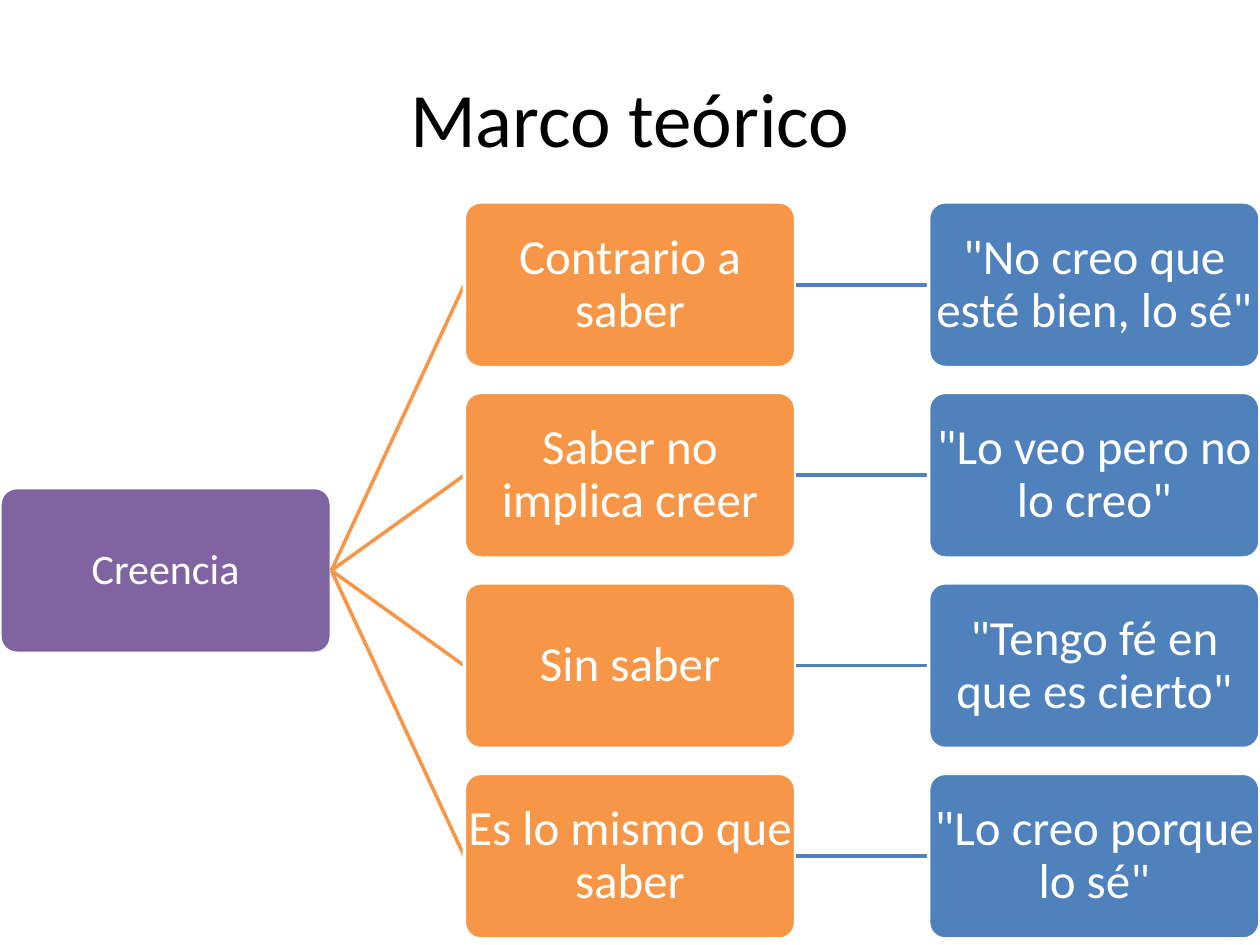
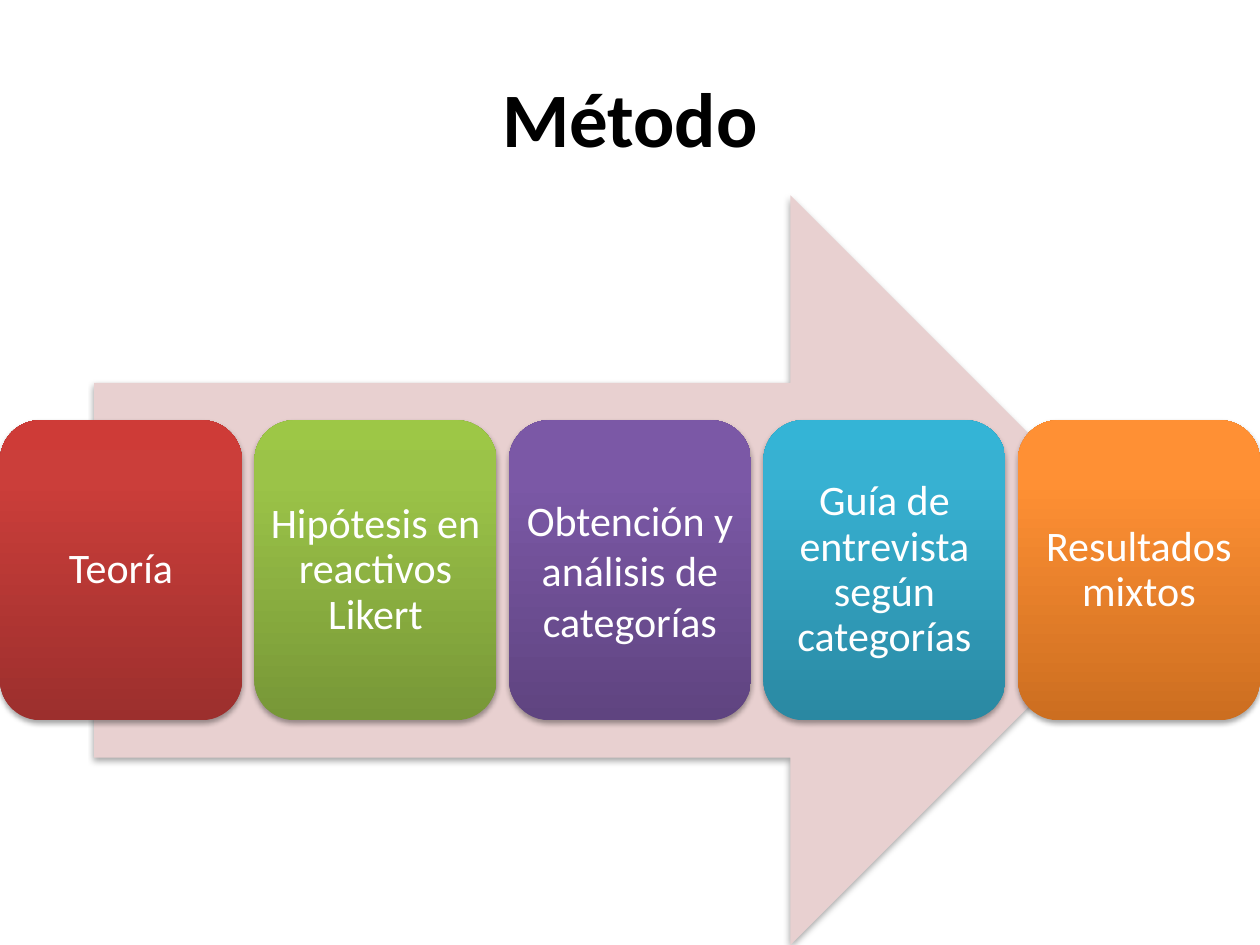
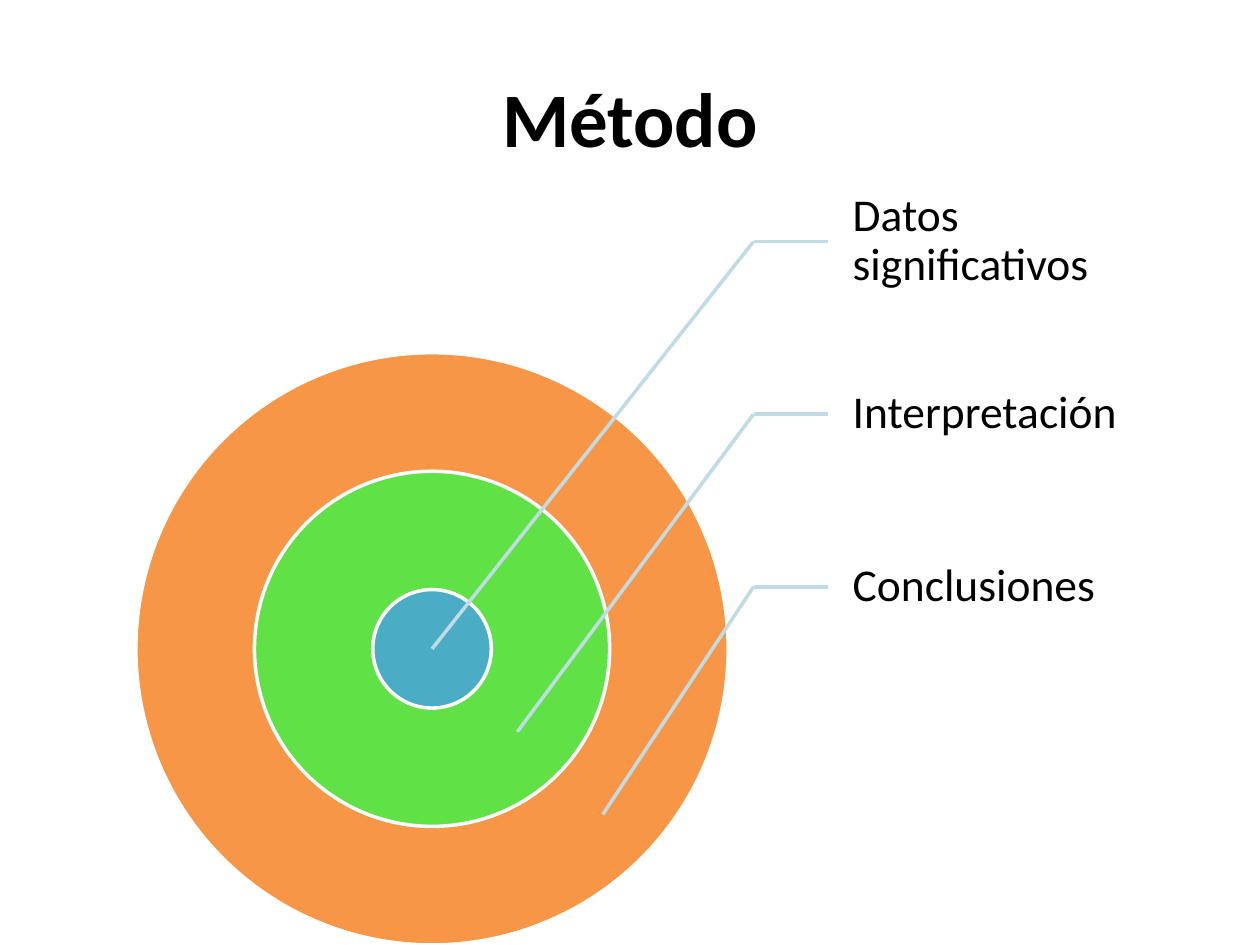
import copy

import lxml.etree
import pptx
import pptx.dml.color
import pptx.enum.shapes
import pptx.enum.text
import pptx.oxml
import pptx.oxml.ns
import pptx.util

Cm, Pt = pptx.util.Cm, pptx.util.Pt
RGB = pptx.dml.color.RGBColor.from_string
SHAPE = pptx.enum.shapes.MSO_SHAPE
ALIGN = pptx.enum.text.PP_ALIGN
qn = pptx.oxml.ns.qn

FONT = "Calibri"
COLORS = {
    "black": "000000", "white": "FFFFFF", "purple": "8064A2", "orange": "F79646",
    "blue": "4F81BD", "pink": "E8D0D0", "green": "60E146", "teal": "4BACC6",
    "pale blue": "C1DBE5",
}
SHADOW = (
    '<a:outerShdw xmlns:a="http://schemas.openxmlformats.org/drawingml/2006/main"'
    ' blurRad="40000" dist="23000" dir="5400000" rotWithShape="0">'
    '<a:srgbClr val="000000"><a:alpha val="35000"/></a:srgbClr></a:outerShdw>'
)


def write(sp, text, size, color="white", align=ALIGN.CENTER, inset=0, spacing=0.9, bold=False):
    tf = sp.text_frame
    tf.text = text
    tf.word_wrap = True
    tf.vertical_anchor = pptx.enum.text.MSO_ANCHOR.MIDDLE
    tf.margin_left = tf.margin_right = Cm(inset)
    tf.margin_top = tf.margin_bottom = Cm(0.1)
    p = tf.paragraphs[0]
    p.alignment = align
    p.line_spacing = spacing
    font = p.runs[0].font
    font.name, font.size, font.bold = FONT, Pt(size), bold
    font.color.rgb = RGB(COLORS[color])


def draw_line(s, x1, y1, x2, y2, color):
    line = s.shapes.add_connector(
        pptx.enum.shapes.MSO_CONNECTOR.STRAIGHT, Cm(x1), Cm(y1), Cm(x2), Cm(y2))
    line.line.color.rgb = RGB(COLORS[color])
    line.line.width = Pt(2)
    lxml.etree.SubElement(line._element.spPr, qn("a:effectLst"))
    return line


prs = pptx.Presentation()
prs.slide_width, prs.slide_height = Cm(25.4), Cm(19.05)

# Slides with their titles
slides = []
for title, bold in [("Marco teórico", False), ("Método", True), ("Método", True)]:
    s = prs.slides.add_slide(prs.slide_layouts[6])
    sp = s.shapes.add_textbox(Cm(1.27), Cm(0.76), Cm(22.86), Cm(3.18))
    write(sp, title, 44, "black", inset=0.25, spacing=1, bold=bold)
    slides.append(s)
theory, process, rings = slides

# Slide 1: tree of beliefs, a root and four branches of two boxes
branches = [
    ("Contrario a saber", '"No creo que esté bien, lo sé"'),
    ("Saber no implica creer", '"Lo veo pero no lo creo"'),
    ("Sin saber", '"Tengo fé en que es cierto"'),
    ("Es lo mismo que saber", '"Lo creo porque lo sé"'),
]
box_w, box_h, col_step, row_step, top = 6.68, 3.34, 9.36, 3.84, 4.07
nodes = [(0, 1.5, "Creencia")]
nodes += [(col, row, text) for row, pair in enumerate(branches)
          for col, text in enumerate(pair, 1)]
root = None
for col, row, text in nodes:
    color = ("purple", "orange", "blue")[col]
    x, y = col * col_step, top + row * row_step
    link = None
    if col:
        parent = root if col == 1 else previous
        link = draw_line(theory, x - col_step + box_w, y + box_h / 2, x, y + box_h / 2, color)
        link.begin_connect(parent, 3)
    sp = theory.shapes.add_shape(SHAPE.ROUNDED_RECTANGLE, Cm(x), Cm(y), Cm(box_w), Cm(box_h))
    sp.adjustments[0] = 0.1
    sp.shadow.inherit = False
    sp.fill.solid()
    sp.fill.fore_color.rgb = RGB(COLORS[color])
    sp.line.color.rgb = RGB(COLORS["white"])
    sp.line.width = Pt(2)
    write(sp, text, 28 if col else 24, inset=-0.04)
    if link:
        link.end_connect(sp, 1)
    root = root or sp
    previous = sp

# Slide 2: arrow behind five steps
arrow = process.shapes.add_shape(SHAPE.RIGHT_ARROW, Cm(1.9), Cm(3.94), Cm(21.59), Cm(15.11))
arrow.fill.solid()
arrow.fill.fore_color.rgb = RGB(COLORS["pink"])
steps = [
    ("Teoría", ("9C2F2D", "CB3E3A", "CE3B37"), 0.9),
    ("Hipótesis en reactivos Likert", ("779737", "9BC348", "9DC746"), 0.9),
    ("Obtención y análisis de categorías", ("5F4480", "7B58A6", "7C57A8"), 1),
    ("Guía de entrevista según categorías", ("2A88A2", "37B1D2", "34B4D6"), 0.9),
    ("Resultados mixtos", ("CC6E20", "FF9034", "FF9136"), 0.9),
]
shaded = [arrow]
for i, (text, shades, spacing) in enumerate(steps):
    sp = process.shapes.add_shape(
        SHAPE.ROUNDED_RECTANGLE, Cm(i * 5.13), Cm(8.47), Cm(4.88), Cm(6.05))
    sp.fill.gradient()
    sp.fill.gradient_angle = 90
    stop_list = sp._element.spPr.find(qn("a:gradFill")).find(qn("a:gsLst"))
    stop_list.append(copy.deepcopy(stop_list[0]))
    for stop, position, shade in zip(sp.fill.gradient_stops, (0, 0.8, 1), shades):
        stop.position = position
        stop.color.rgb = RGB(shade)
    write(sp, text, 24, spacing=spacing)
    shaded.append(sp)
for sp in shaded:
    sp.line.fill.background()
    sp.shadow.inherit = False
    sp._element.spPr.find(qn("a:effectLst")).append(pptx.oxml.parse_xml(SHADOW))

# Slide 3: concentric rings
center_x, center_y = 8.71, 13.08
for diameter, color in [(11.94, "orange"), (7.16, "green"), (2.39, "teal")]:
    sp = rings.shapes.add_shape(
        SHAPE.OVAL, Cm(center_x - diameter / 2), Cm(center_y - diameter / 2),
        Cm(diameter), Cm(diameter))
    sp.shadow.inherit = False
    sp.fill.solid()
    sp.fill.fore_color.rgb = RGB(COLORS[color])
    sp.line.color.rgb = RGB(COLORS["white"])
    sp.line.width = Pt(2)

# Slide 3: labels with bent leader lines
label_x, label_h, elbow_x = 16.69, 3.48, 15.19
for i, text in enumerate(["Datos significativos", "Interpretación", "Conclusiones"]):
    y = 3.13 + i * label_h
    sp = rings.shapes.add_textbox(Cm(label_x), Cm(y), Cm(5.97), Cm(label_h))
    write(sp, text, 26, "black", ALIGN.LEFT, inset=0.1)
    sp.text_frame.margin_left = Cm(0.5)
    middle = y + label_h / 2
    draw_line(rings, elbow_x, middle, label_x, middle, "pale blue")
    draw_line(rings, elbow_x, middle, center_x + i * 1.72, center_y + i * 1.67, "pale blue")

prs.save("out.pptx")
